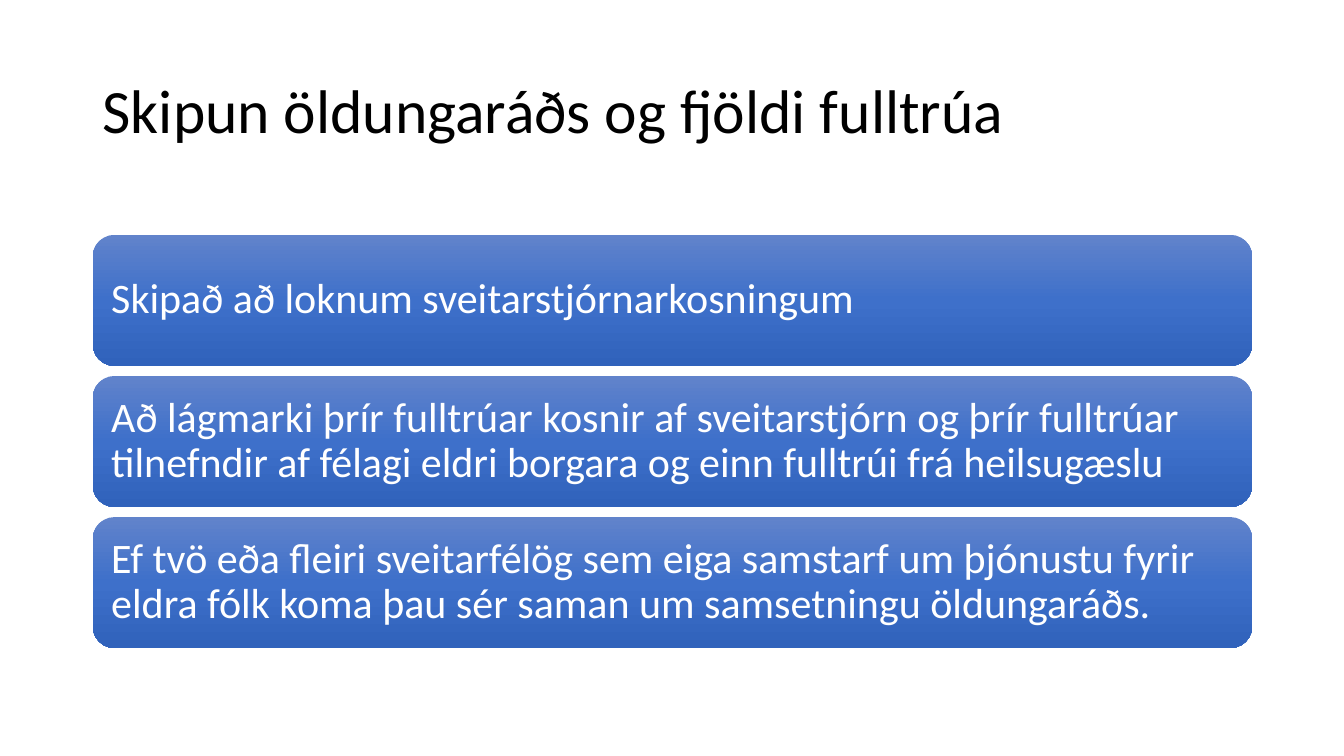
from copy import deepcopy

from pptx import Presentation
from pptx.dml.color import RGBColor
from pptx.enum.shapes import MSO_SHAPE
from pptx.enum.text import MSO_ANCHOR, PP_ALIGN
from pptx.oxml.ns import qn
from pptx.util import Inches, Pt

COLORS = {
    "title": "000000",
    "card_text": "FFFFFF",
    "card_top": "6183CB",
    "card_middle": "3E70CA",
    "card_bottom": "3062BB",
}
TITLE = "Skipun öldungaráðs og fjöldi fulltrúa"
CARDS = [
    "Skipað að loknum sveitarstjórnarkosningum",
    "Að lágmarki þrír fulltrúar kosnir af sveitarstjórn og þrír fulltrúar "
    "tilnefndir af félagi eldri borgara og einn fulltrúi frá heilsugæslu",
    "Ef tvö eða fleiri sveitarfélög sem eiga samstarf um þjónustu fyrir "
    "eldra fólk koma þau sér saman um samsetningu öldungaráðs.",
]
LEFT, WIDTH = 0.92, 11.5
CARD_TOP, CARD_HEIGHT, CARD_STEP = 2.33, 1.3, 1.4


def rgb(name):
    return RGBColor.from_string(COLORS[name])


def write_text(sp, text, size, color, inset_x, inset_y):
    tf = sp.text_frame
    tf.word_wrap = True
    tf.vertical_anchor = MSO_ANCHOR.MIDDLE
    tf.margin_left = tf.margin_right = Inches(inset_x)
    tf.margin_top = tf.margin_bottom = Inches(inset_y)
    p = tf.paragraphs[0]
    p.alignment = PP_ALIGN.LEFT
    p.line_spacing = 0.9
    r = p.add_run()
    r.text = text
    r.font.name = "Calibri"
    r.font.size = Pt(size)
    r.font.color.rgb = rgb(color)


def fill_gradient(sp, names):
    """Fill from top to bottom with evenly spaced colours."""
    fill = sp.fill
    fill.gradient()
    fill.gradient_angle = 270
    stops = sp.element.spPr.find(qn("a:gradFill")).find(qn("a:gsLst"))
    while len(stops) < len(names):
        stops.append(deepcopy(stops[0]))
    for i, (stop, name) in enumerate(zip(fill.gradient_stops, names)):
        stop.position = i / (len(names) - 1)
        stop.color.rgb = rgb(name)


def add_title(s, text):
    sp = s.shapes.add_textbox(Inches(LEFT), Inches(0.4), Inches(WIDTH), Inches(1.45))
    write_text(sp, text, size=44, color="title", inset_x=0.1, inset_y=0.05)


def add_card(s, text, top):
    sp = s.shapes.add_shape(MSO_SHAPE.ROUNDED_RECTANGLE, Inches(LEFT), Inches(top),
                            Inches(WIDTH), Inches(CARD_HEIGHT))
    sp.shadow.inherit = False
    sp.line.fill.background()
    fill_gradient(sp, ["card_top", "card_middle", "card_bottom"])
    write_text(sp, text, size=30, color="card_text", inset_x=0.12, inset_y=0.12)


def main():
    prs = Presentation()
    prs.slide_width, prs.slide_height = Inches(13.33), Inches(7.5)
    s = prs.slides.add_slide(prs.slide_layouts[6])
    add_title(s, TITLE)
    for i, text in enumerate(CARDS):
        add_card(s, text, CARD_TOP + i * CARD_STEP)
    prs.save("out.pptx")


if __name__ == "__main__":
    main()
